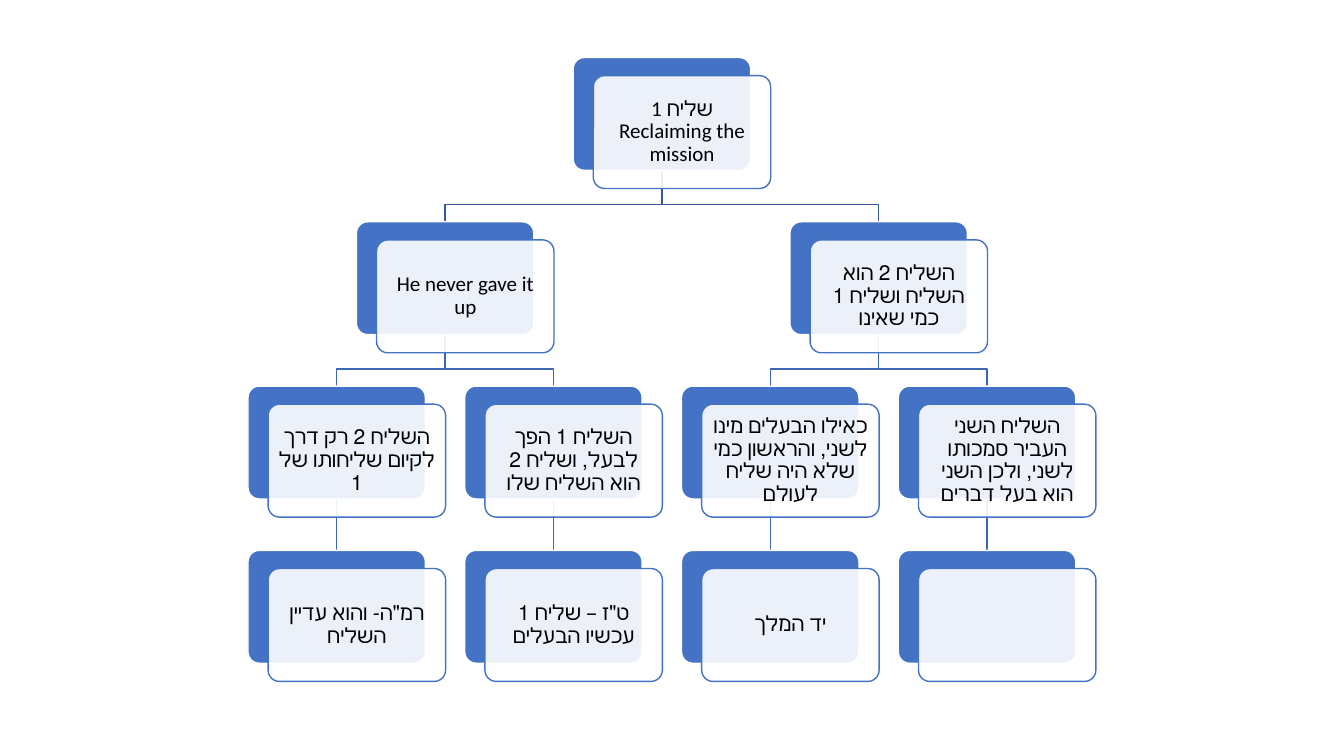
from dataclasses import dataclass

from lxml.etree import SubElement
from pptx import Presentation
from pptx.dml.color import RGBColor
from pptx.enum.shapes import MSO_CONNECTOR, MSO_SHAPE
from pptx.enum.text import MSO_ANCHOR, PP_ALIGN
from pptx.oxml.ns import qn
from pptx.util import Inches, Pt

ROUND = MSO_SHAPE.ROUNDED_RECTANGLE
STRAIGHT = MSO_CONNECTOR.STRAIGHT
MIDDLE = MSO_ANCHOR.MIDDLE
CENTER = PP_ALIGN.CENTER

BLUE = RGBColor(0x44, 0x72, 0xC4)
DARK = RGBColor(0x36, 0x5B, 0x9D)
MID = RGBColor(0x3E, 0x67, 0xB2)
WHITE = RGBColor(0xFF, 0xFF, 0xFF)
BLACK = RGBColor(0, 0, 0)

FONT = "Calibri"
LEFT, TOP = 2.46, 0.57
COL, ROW = 2.15, 1.63
WIDE, HIGH = 1.76, 1.12
SHIFT_X, SHIFT_Y = 0.2, 0.18
PAD = 0.03
BEND = 0.17


@dataclass
class Node:
    """A card; col counts in card widths and may be a half."""
    col: float
    row: int
    lines: tuple[str, ...] = ()
    parent: "Node | None" = None

    @property
    def left(self) -> float:
        return LEFT + COL * self.col

    @property
    def top(self) -> float:
        return TOP + ROW * self.row

    @property
    def mid(self) -> float:
        return self.left + WIDE / 2


ROOT = Node(1.5, 0, ("שליח 1", "Reclaiming the mission"))
KEPT = Node(0.5, 1, ("He never gave it up",), ROOT)
MOVED = Node(2.5, 1, ("השליח 2 הוא השליח ושליח 1 כמי שאינו",), ROOT)
VIEWS = [
    Node(0, 2, ("השליח 2 רק דרך לקיום שליחותו של 1",), KEPT),
    Node(1, 2, ("השליח 1 הפך לבעל, ושליח 2 הוא השליח שלו",), KEPT),
    Node(2, 2, ("כאילו הבעלים מינו לשני, והראשון כמי שלא היה שליח לעולם",), MOVED),
    Node(3, 2, ("השליח השני העביר סמכותו לשני, ולכן השני הוא בעל דברים",), MOVED),
]
NAMES = [('רמ"ה- והוא עדיין השליח',), ('ט"ז – שליח 1 עכשיו הבעלים',), ("יד המלך",), ()]
LEAVES = [Node(view.col, 3, name, view) for view, name in zip(VIEWS, NAMES)]
NODES = [ROOT, KEPT, MOVED, *VIEWS, *LEAVES]


def add_link(shapes, node: Node) -> None:
    """Join a card to its parent, with a bend when their columns differ."""
    start = node.parent
    base = start.top + HIGH
    if start.col == node.col:
        link = shapes.add_connector(STRAIGHT, Inches(start.mid), Inches(base),
                                    Inches(node.mid), Inches(node.top))
        SubElement(link._element.spPr, qn("a:effectLst"))
    else:
        turn = node.top - BEND
        path = shapes.build_freeform(Inches(start.mid), Inches(base))
        path.add_line_segments(
            [(Inches(x), Inches(y)) for x, y in
             ((start.mid, turn), (node.mid, turn), (node.mid, node.top))],
            close=False)
        link = path.convert_to_shape()
        link.fill.background()
        link.shadow.inherit = False
    link.line.color.rgb = DARK if node.row == 1 else MID
    link.line.width = Pt(1)


def add_panel(shapes, left: float, top: float, fill: RGBColor, edge: RGBColor):
    panel = shapes.add_shape(ROUND, Inches(left), Inches(top), Inches(WIDE), Inches(HIGH))
    panel.adjustments[0] = 0.1
    panel.shadow.inherit = False
    panel.fill.solid()
    panel.fill.fore_color.rgb = fill
    panel.line.color.rgb = edge
    panel.line.width = Pt(1)
    return panel


def add_label(shapes, left: float, top: float, lines: tuple[str, ...]) -> None:
    box = shapes.add_textbox(Inches(left + PAD), Inches(top + PAD),
                             Inches(WIDE - 2 * PAD), Inches(HIGH - 2 * PAD))
    frame = box.text_frame
    frame.word_wrap = True
    frame.vertical_anchor = MIDDLE
    frame.margin_left = frame.margin_right = Inches(0.06)
    frame.margin_top = frame.margin_bottom = Inches(0.06)
    para = frame.paragraphs[0]
    para.alignment = CENTER
    para.line_spacing = 0.9
    props = para._p.get_or_add_pPr()
    props.set("rtl", "1")
    after = SubElement(props, qn("a:spcAft"))
    SubElement(after, qn("a:spcPct"), val="35000")
    for i, line in enumerate(lines):
        if i:
            para.add_line_break()
        run = para.add_run()
        run.text = line
        run.font.name = FONT
        run.font.size = Pt(15)
        run.font.color.rgb = BLACK


def add_card(shapes, node: Node) -> None:
    add_panel(shapes, node.left, node.top, BLUE, WHITE)
    left, top = node.left + SHIFT_X, node.top + SHIFT_Y
    front = add_panel(shapes, left, top, WHITE, BLUE)
    tint = front._element.spPr.find(qn("a:solidFill"))[0]
    SubElement(tint, qn("a:alpha"), val="90000")
    if node.lines:
        add_label(shapes, left, top, node.lines)


def main() -> None:
    deck = Presentation()
    deck.slide_width, deck.slide_height = Inches(13.33), Inches(7.5)
    shapes = deck.slides.add_slide(deck.slide_layouts[6]).shapes
    for node in NODES:
        if node.parent:
            add_link(shapes, node)
    for node in NODES:
        add_card(shapes, node)
    deck.save("out.pptx")


if __name__ == "__main__":
    main()
